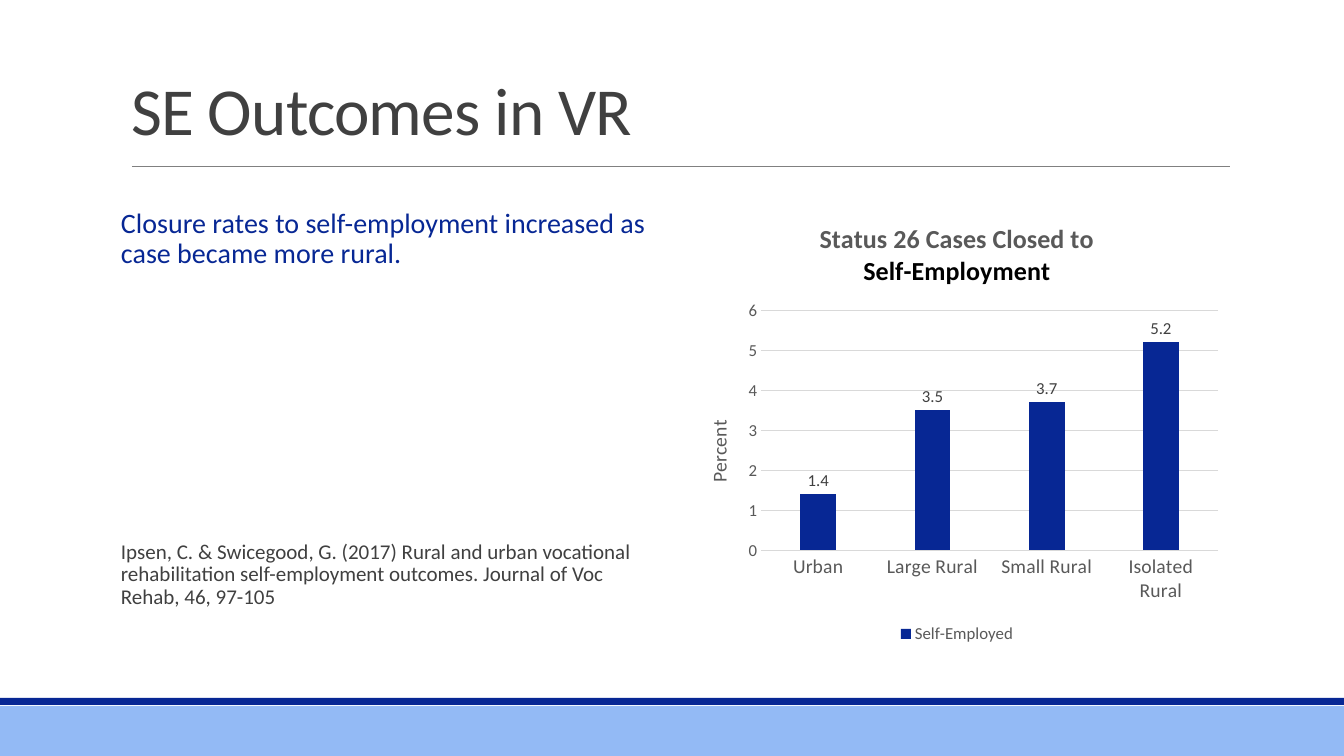
from lxml.etree import SubElement
from pptx import Presentation
from pptx.chart.data import CategoryChartData
from pptx.dml.color import RGBColor
from pptx.enum.chart import XL_CHART_TYPE as ChartType, XL_LABEL_POSITION as LabelPos
from pptx.enum.chart import XL_LEGEND_POSITION as LegendPos, XL_TICK_MARK as Tick
from pptx.enum.shapes import MSO_CONNECTOR as Connector, MSO_SHAPE as Shape
from pptx.enum.text import MSO_ANCHOR as Anchor, MSO_AUTO_SIZE as AutoSize, PP_ALIGN as Align
from pptx.oxml.ns import qn
from pptx.util import Pt

COLORS = {"navy": "072794", "sky": "93BAF5", "rule": "808080", "text": "404040",
          "axis": "595959", "grid": "D9D9D9", "black": "000000"}
FONT = "Calibri"


def px(*values):
    return [round(v * 914400 / 100.8) for v in values]


def style(font, size, color, bold=False):
    font.name, font.size, font.bold = FONT, Pt(size), bold
    font.color.rgb = RGBColor.from_string(COLORS[color])


prs = Presentation()
prs.slide_width, prs.slide_height = px(1344, 756)
s = prs.slides.add_slide(prs.slide_layouts[5])

for top, height, color in [(706, 50, "sky"), (698, 7, "navy")]:
    band = s.shapes.add_shape(Shape.RECTANGLE, *px(0, top, 1344, height))
    band.shadow.inherit = False
    band.fill.solid()
    band.fill.fore_color.rgb = RGBColor.from_string(COLORS[color])
    band.line.fill.background()

rule = s.shapes.add_connector(Connector.STRAIGHT, *px(132, 166, 1230, 166))
rule.line.color.rgb = RGBColor.from_string(COLORS["rule"])
rule.line.width = Pt(0.5)
SubElement(rule._element.spPr, qn("a:effectLst"))

title = s.shapes.title
title.left, title.top, title.width, title.height = px(121, -6, 1109, 160)
tf = title.text_frame
tf.text = "SE Outcomes in VR"
tf.auto_size = AutoSize.NONE
tf.vertical_anchor = Anchor.BOTTOM
p = tf.paragraphs[0]
p.alignment, p.line_spacing = Align.LEFT, 0.85
r = p.runs[0]
style(r.font, 48, "text")
r.font._element.set("spc", "-50")

body = s.shapes.add_textbox(*px(121, 204, 544, 444))
tf = body.text_frame
tf.word_wrap = True
tf.margin_left = tf.margin_right = 0
paragraphs = [
    ("Closure rates to self-employment increased as case became more rural.", 20, "navy", 0),
    ("Ipsen, C. & Swicegood, G. (2017) Rural and urban vocational rehabilitation "
     "self-employment outcomes. Journal of Voc Rehab, 46, 97-105", 15, "text", 192),
]
for i, (text, size, color, before) in enumerate(paragraphs):
    p = tf.add_paragraph() if i else tf.paragraphs[0]
    p.text = text
    p.line_spacing, p.space_before, p.space_after = 0.9, Pt(before), Pt(2)
    style(p.runs[0].font, size, color)

data = CategoryChartData()
data.categories = ["Urban", "Large Rural", "Small Rural", "Isolated Rural"]
data.add_series("Self-Employed", [1.4, 3.5, 3.7, 5.2])
chart = s.shapes.add_chart(ChartType.COLUMN_CLUSTERED, *px(685, 204, 544, 444), data).chart
style(chart.font, 10, "black")

tf = chart.chart_title.text_frame
tf.text = "Status 26 Cases Closed to\nSelf-Employment"
for p, color in zip(tf.paragraphs, ["axis", "black"]):
    style(p.runs[0].font, 18.6, color, True)
chart.chart_title.include_in_layout = False

chart.has_legend = True
chart.legend.position = LegendPos.BOTTOM
chart.legend.include_in_layout = False
style(chart.legend.font, 12, "axis")

cat, val = chart.category_axis, chart.value_axis
for axis, size in [(cat, 14), (val, 12)]:
    axis.major_tick_mark = axis.minor_tick_mark = Tick.NONE
    style(axis.tick_labels.font, size, "axis")
val.minimum_scale, val.maximum_scale, val.major_unit = 0, 6, 1
val.format.line.fill.background()
for line in [cat.format.line, val.major_gridlines.format.line]:
    line.color.rgb = RGBColor.from_string(COLORS["grid"])
    line.width = Pt(0.75)
tf = val.axis_title.text_frame
tf.text = "Percent"
style(tf.paragraphs[0].runs[0].font, 14, "axis")

plot = chart.plots[0]
plot.gap_width, plot.overlap, plot.vary_by_categories = 219, -27, False
bars = plot.series[0]
bars.format.fill.solid()
bars.format.fill.fore_color.rgb = RGBColor.from_string(COLORS["navy"])
plot.has_data_labels = True
labels = plot.data_labels
labels.show_value, labels.position = True, LabelPos.OUTSIDE_END
style(labels.font, 12, "text")

area = chart._chartSpace.chart.plotArea
layout = area.find(qn("c:layout"))
if layout is None:
    layout = SubElement(area, qn("c:layout"))
    area.insert(0, layout)
manual = SubElement(layout, qn("c:manualLayout"))
for tag, value in [("layoutTarget", "inner"), ("xMode", "edge"), ("yMode", "edge"),
                   ("x", "0.14"), ("y", "0.24"), ("w", "0.84"), ("h", "0.54")]:
    SubElement(manual, qn("c:" + tag)).set("val", value)

prs.save("out.pptx")
